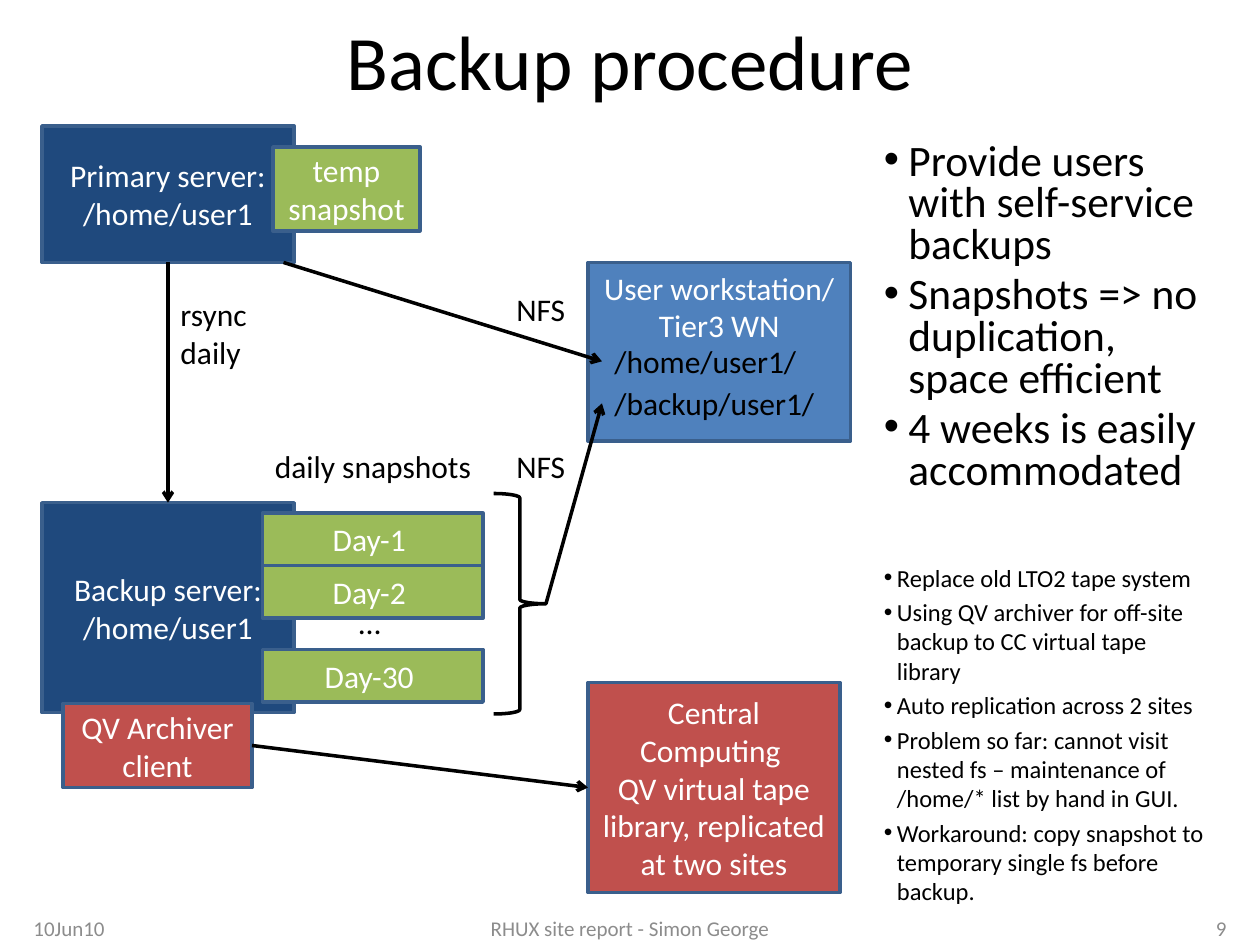
"""Builds the backup procedure slide with its server diagram and notes."""
import pptx
import pptx.util
import pptx.dml.color
import pptx.enum.shapes
import pptx.enum.text
import pptx.oxml
import pptx.oxml.ns
from dataclasses import dataclass

Pt = pptx.util.Pt
Align = pptx.enum.text.PP_ALIGN
Anchor = pptx.enum.text.MSO_ANCHOR
Shape = pptx.enum.shapes.MSO_SHAPE


@dataclass(frozen=True)
class Theme:
    font: str = "Calibri"
    ink: str = "000000"
    paper: str = "FFFFFF"
    muted: str = "8C8C8C"
    server: str = "1F497D"
    workstation: str = "4F81BD"
    snapshot: str = "9BBB59"
    tape: str = "C0504D"
    outline: str = "3A5F8C"
    title: float = 44
    goal: float = 24.8
    label: float = 18
    note: float = 14
    footer: float = 12
    stroke: float = 2


THEME = Theme()

TITLE = ("Backup procedure", (36, 0, 648, 68))
FOOTERS = [
    ("10Jun10", (12, 522, 168, 16.5), Align.LEFT),
    ("RHUX site report - Simon George", (246, 522, 228, 16.5), Align.CENTER),
    ("9", (540, 522, 168, 16.5), Align.RIGHT),
]
BOXES = {
    "workstation": (["User workstation/", "Tier3 WN"], (336, 150, 150, 102), THEME.workstation, Anchor.TOP),
    "primary": (["Primary server:", "/home/user1"], (24, 72, 144, 78), THEME.server, Anchor.MIDDLE),
    "backup": (["Backup server:", "/home/user1"], (24, 287.25, 144, 120), THEME.server, Anchor.MIDDLE),
    "temp": (["temp snapshot"], (156, 84, 84, 48), THEME.snapshot, Anchor.MIDDLE),
    "central": (["Central Computing ", "QV virtual tape library, replicated at two sites"],
                (336, 390, 144, 120), THEME.tape, Anchor.MIDDLE),
    "protector": (["QV Archiver client"], (36, 402, 108, 48), THEME.tape, Anchor.MIDDLE),
}
DAYS = [("Day-1 ", 293.25), ("Day-2 ", 323.25), ("Day-30 ", 371.25)]
DAY_LEFT, DAY_WIDTH, DAY_HEIGHT = 150, 126, 30
BRACE = (282, 282, 30, 126)
LABELS = [
    ("/backup/user1/", (344, 216, 130, 29), False),
    ("/home/user1/", (344, 192, 130, 29), True),
    ("rsync daily", (96, 165, 60, 51), True),
    ("…", (198, 341, 27, 29), False),
    ("daily snapshots", (150, 252, 130, 29), False),
    ("NFS", (288, 162, 60, 29), True),
    ("NFS", (288, 252, 60, 29), True),
]
JOINED_ARROWS = [("primary", 2, "backup", 0), ("protector", 3, "central", 1)]
FREE_ARROWS = [((162, 150), (344, 206.5)), ((312, 345), (344, 230.5))]
GOALS = [
    "Provide users with self-service backups",
    "Snapshots => no duplication, space efficient",
    "4 weeks is easily accommodated",
]
NOTES = [
    "Replace old LTO2 tape system",
    "Using QV archiver for off-site backup to CC virtual tape library",
    "Auto replication across 2 sites",
    "Problem so far: cannot visit nested fs – maintenance of /home/* list by hand in GUI.",
    "Workaround: copy snapshot to temporary single fs before backup.",
]
LISTS = [
    (GOALS, (498, 78, 204, 222), THEME.goal, 14, 0.8),
    (NOTES, (498, 318, 202, 204), THEME.note, 7.5, 1),
]


def rgb(value):
    return pptx.dml.color.RGBColor.from_string(value)


def add_xml(parent, tag, **attributes):
    child = pptx.oxml.parse_xml(f"<{tag} {pptx.oxml.ns.nsdecls('a')}/>")
    for name, value in attributes.items():
        child.set(name, str(value))
    parent.append(child)


def write(para, lines, size, color, align=Align.LEFT):
    para.alignment = align
    for index, line in enumerate(lines):
        if index:
            para.add_line_break()
        span = para.add_run()
        span.text = line
        span.font.name = THEME.font
        span.font.size = Pt(size)
        span.font.color.rgb = rgb(color)


def add_frame(page, place, wrap=True, anchor=Anchor.TOP):
    frame = page.shapes.add_textbox(*map(Pt, place)).text_frame
    frame.word_wrap = wrap
    frame.vertical_anchor = anchor
    return frame


def add_box(page, lines, place, fill, anchor):
    box = page.shapes.add_shape(Shape.RECTANGLE, *map(Pt, place))
    box.shadow.inherit = False
    box.fill.solid()
    box.fill.fore_color.rgb = rgb(fill)
    box.line.color.rgb = rgb(THEME.outline)
    box.line.width = Pt(THEME.stroke)
    box.text_frame.word_wrap = True
    box.text_frame.vertical_anchor = anchor
    write(box.text_frame.paragraphs[0], lines, THEME.label, THEME.paper, Align.CENTER)
    return box


def add_brace(page):
    brace = page.shapes.add_shape(Shape.LEFT_BRACE, *map(Pt, BRACE))
    brace.rotation = 180
    brace.shadow.inherit = False
    brace.fill.background()
    brace.line.color.rgb = rgb(THEME.ink)
    brace.line.width = Pt(THEME.stroke)


def add_arrow(page, start=(0, 0), end=(0, 0)):
    arrow = page.shapes.add_connector(
        pptx.enum.shapes.MSO_CONNECTOR.STRAIGHT, *map(Pt, (*start, *end)))
    arrow.line.color.rgb = rgb(THEME.ink)
    arrow.line.width = Pt(THEME.stroke)
    add_xml(arrow.line._get_or_add_ln(), "a:tailEnd", type="arrow")
    add_xml(arrow._element.spPr, "a:effectLst")
    return arrow


def add_list(page, items, place, size, indent, spacing):
    frame = add_frame(page, place)
    for index, item in enumerate(items):
        para = frame.add_paragraph() if index else frame.paragraphs[0]
        para.line_spacing = spacing
        para.space_before = Pt(round(size * 0.2, 1))
        write(para, [item], size, THEME.ink)
        properties = para._p.get_or_add_pPr()
        properties.set("marL", str(Pt(indent)))
        properties.set("indent", str(-Pt(indent)))
        add_xml(properties, "a:buFont", typeface="Arial")
        add_xml(properties, "a:buChar", char="•")


def main():
    deck = pptx.Presentation()
    deck.slide_width, deck.slide_height = Pt(720), Pt(540)
    page = deck.slides.add_slide(deck.slide_layouts[6])

    title, place = TITLE
    frame = add_frame(page, place, anchor=Anchor.MIDDLE)
    write(frame.paragraphs[0], [title], THEME.title, THEME.ink, Align.CENTER)
    for text, place, align in FOOTERS:
        frame = add_frame(page, place, anchor=Anchor.MIDDLE)
        write(frame.paragraphs[0], [text], THEME.footer, THEME.muted, align)

    boxes = {name: add_box(page, *content) for name, content in BOXES.items()}
    for day, top in DAYS:
        add_box(page, [day], (DAY_LEFT, top, DAY_WIDTH, DAY_HEIGHT), THEME.snapshot, Anchor.MIDDLE)
    add_brace(page)
    for text, place, wrap in LABELS:
        write(add_frame(page, place, wrap).paragraphs[0], [text], THEME.label, THEME.ink)

    for source, source_side, target, target_side in JOINED_ARROWS:
        arrow = add_arrow(page)
        arrow.begin_connect(boxes[source], source_side)
        arrow.end_connect(boxes[target], target_side)
    for start, end in FREE_ARROWS:
        add_arrow(page, start, end)
    for content in LISTS:
        add_list(page, *content)

    deck.save("out.pptx")


if __name__ == "__main__":
    main()
